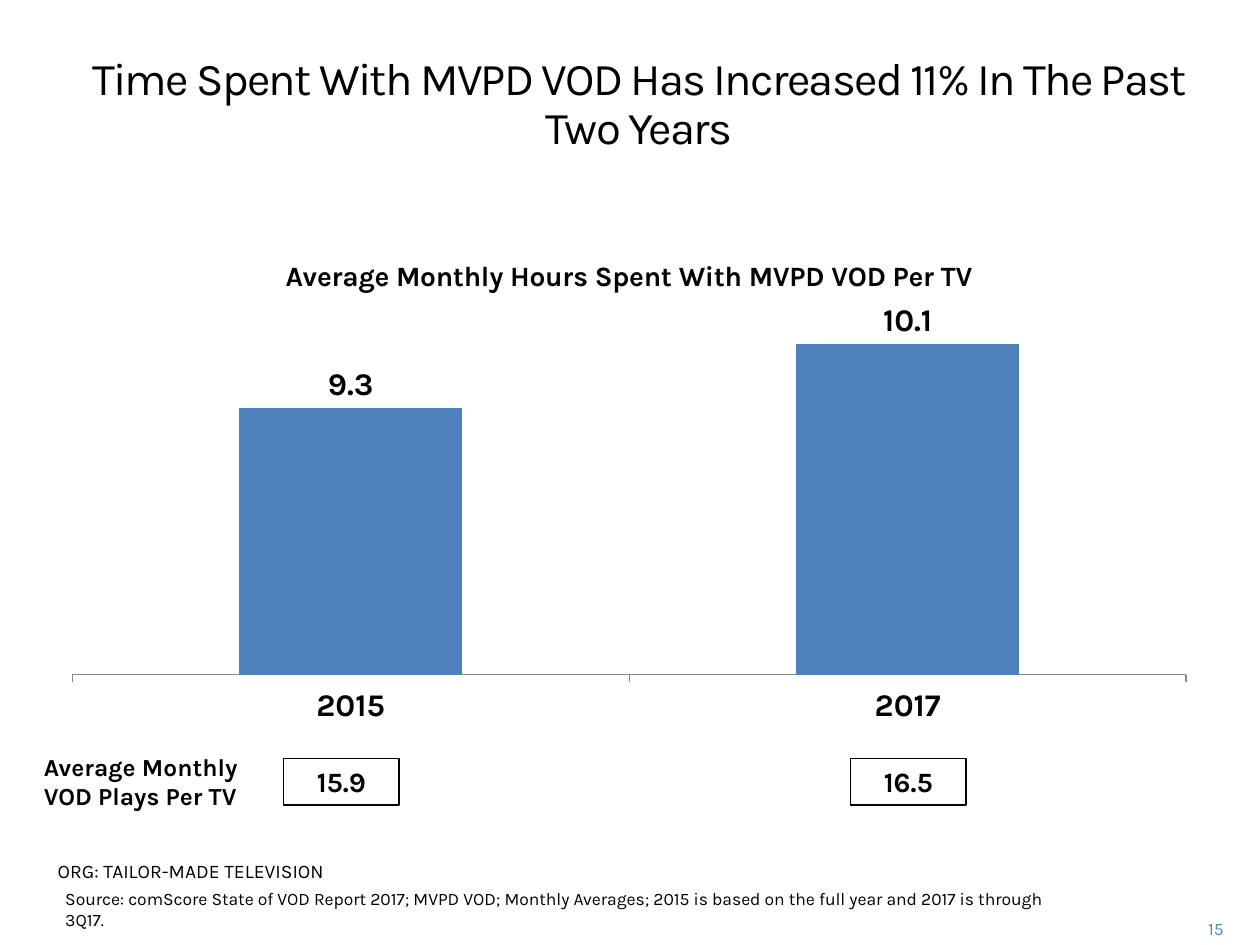
"""Build the slide on time spent with MVPD VOD."""
from dataclasses import dataclass

from lxml import etree
from pptx import Presentation
from pptx.chart.data import CategoryChartData
from pptx.dml.color import RGBColor
from pptx.enum.chart import XL_CHART_TYPE, XL_LABEL_POSITION, XL_TICK_LABEL_POSITION, XL_TICK_MARK
from pptx.enum.shapes import MSO_SHAPE
from pptx.enum.text import MSO_ANCHOR, PP_ALIGN
from pptx.oxml import parse_xml
from pptx.oxml.ns import nsdecls
from pptx.util import Pt

LEFT, MID, RIGHT = PP_ALIGN.LEFT, PP_ALIGN.CENTER, PP_ALIGN.RIGHT
TOP, CENTRE = MSO_ANCHOR.TOP, MSO_ANCHOR.MIDDLE
RECT = MSO_SHAPE.RECTANGLE
COLUMN = XL_CHART_TYPE.COLUMN_CLUSTERED
ABOVE = XL_LABEL_POSITION.OUTSIDE_END
LOW = XL_TICK_LABEL_POSITION.LOW
OUT, NONE = XL_TICK_MARK.OUTSIDE, XL_TICK_MARK.NONE
FACE = "Karla"
HEX = {"ink": "000000", "bar": "4F81BD", "page": "508ABA", "axis": "868686"}
PLOT = {"x": 0.02, "y": 0.15, "w": 0.96, "h": 0.73}


@dataclass
class Note:
    """A piece of text with its box in points."""
    text: str
    box: tuple[float, float, float, float]
    size: float
    bold: bool = False
    tint: str = "ink"
    align: PP_ALIGN = LEFT
    anchor: MSO_ANCHOR = TOP
    frame: bool = False


TITLE = Note("Time Spent With MVPD VOD Has Increased 11% In The Past Two Years",
             (28, 29, 674, 61), 26, align=MID, anchor=CENTRE)
NOTES = [
    Note("15", (662.4, 521.3, 43.9, 18), 10, tint="page", align=RIGHT, anchor=CENTRE),
    Note("ORG: TAILOR-MADE TELEVISION", (25.9, 487.4, 221.8, 33.8), 11),
    Note("Source: comScore State of VOD Report 2017; MVPD VOD; Monthly Averages; "
         "2015 is based on the full year and 2017 is through 3Q17.",
         (30.2, 504, 574.6, 31.7), 10),
    Note("Average Monthly VOD Plays Per TV", (18, 426.2, 133.2, 41), 14, bold=True),
]
PLAYS = [Note(text, (left, 433.4, 66.2, 26.6), 16, bold=True, align=MID, anchor=CENTRE, frame=True)
         for text, left in (("15.9", 162), ("16.5", 486))]


def tint(name: str) -> RGBColor:
    """Return a named colour."""
    return RGBColor.from_string(HEX[name])


def style(font, size: float, bold: bool = False, name: str = "ink") -> None:
    """Set the face, size, weight and colour of a font."""
    for key, value in {"name": FACE, "size": Pt(size), "bold": bold}.items():
        setattr(font, key, value)
    font.color.rgb = tint(name)


def write(shape, note: Note) -> None:
    """Put the text of a note in a shape."""
    frame = shape.text_frame
    form = {"word_wrap": True, "vertical_anchor": note.anchor,
            "margin_left": Pt(7.2), "margin_right": Pt(7.2),
            "margin_top": Pt(3.6), "margin_bottom": Pt(3.6)}
    for key, value in form.items():
        setattr(frame, key, value)
    para = frame.paragraphs[0]
    para.alignment = note.align
    run = para.add_run()
    run.text = note.text
    style(run.font, note.size, note.bold, note.tint)


def head(slide, note: Note) -> None:
    """Place and fill the title."""
    shape = slide.shapes.title
    for key, value in zip(("left", "top", "width", "height"), note.box):
        setattr(shape, key, Pt(value))
    write(shape, note)
    para = shape.text_frame.paragraphs[0]
    para.line_spacing = Pt(28)
    para.runs[0].font._element.set("spc", "-100")


def draw(slide, note: Note) -> None:
    """Draw a note as plain text or in a frame."""
    box = [Pt(value) for value in note.box]
    if note.frame:
        shape = slide.shapes.add_shape(RECT, *box)
        shape.shadow.inherit = False
        shape.fill.background()
        shape.line.color.rgb = tint("ink")
        shape.line.width = Pt(1)
    else:
        shape = slide.shapes.add_textbox(*box)
    write(shape, note)


def place(chart) -> None:
    """Fix the inner plot area of a chart."""
    area = chart._chartSpace.chart.plotArea
    for old in area.findall("{*}layout"):
        area.remove(old)
    node = parse_xml(f"<c:layout {nsdecls('c')}><c:manualLayout/></c:layout>")
    rules = {"layoutTarget": "inner", "xMode": "edge", "yMode": "edge", **PLOT}
    for key, value in rules.items():
        etree.SubElement(node[0], f"{{{node.nsmap['c']}}}{key}").set("val", str(value))
    area.insert(0, node)


def graph(slide) -> None:
    """Add the column chart of monthly hours."""
    data = CategoryChartData(number_format="0.0")
    data.categories = ["2015", "2017"]
    data.add_series("Series 1", (9.3, 10.1))
    box = [Pt(value) for value in (28, 135.4, 663.1, 284.4)]
    chart = slide.shapes.add_chart(COLUMN, *box, data).chart
    style(chart.font, 18)
    chart.has_legend = False
    para = chart.chart_title.text_frame.paragraphs[0]
    run = para.add_run()
    run.text = "Average Monthly Hours Spent With MVPD VOD Per TV"
    style(run.font, 16, True)
    chart.chart_title.include_in_layout = False
    side, base = chart.value_axis, chart.category_axis
    forms = (
        (side, {"minimum_scale": 6, "maximum_scale": 10.5, "visible": False,
                "has_major_gridlines": False}),
        (base, {"major_tick_mark": OUT, "minor_tick_mark": NONE,
                "tick_label_position": LOW}),
    )
    for axis, form in forms:
        for key, value in form.items():
            setattr(axis, key, value)
    base.format.line.color.rgb = tint("axis")
    base.format.line.width = Pt(0.75)
    style(base.tick_labels.font, 18, True)
    plot = chart.plots[0]
    plot.gap_width = 150
    plot.vary_by_categories = False
    bars = plot.series[0]
    bars.format.fill.solid()
    bars.format.fill.fore_color.rgb = tint("bar")
    tags = bars.data_labels
    for key, value in {"show_value": True, "position": ABOVE, "number_format": "0.0",
                       "number_format_is_linked": False}.items():
        setattr(tags, key, value)
    style(tags.font, 18, True)
    place(chart)


def main() -> None:
    """Build and save the slide."""
    deck = Presentation()
    deck.slide_width, deck.slide_height = Pt(720), Pt(540)
    slide = deck.slides.add_slide(deck.slide_layouts[5])
    head(slide, TITLE)
    graph(slide)
    for note in NOTES + PLAYS:
        draw(slide, note)
    deck.save("out.pptx")


if __name__ == "__main__":
    main()
